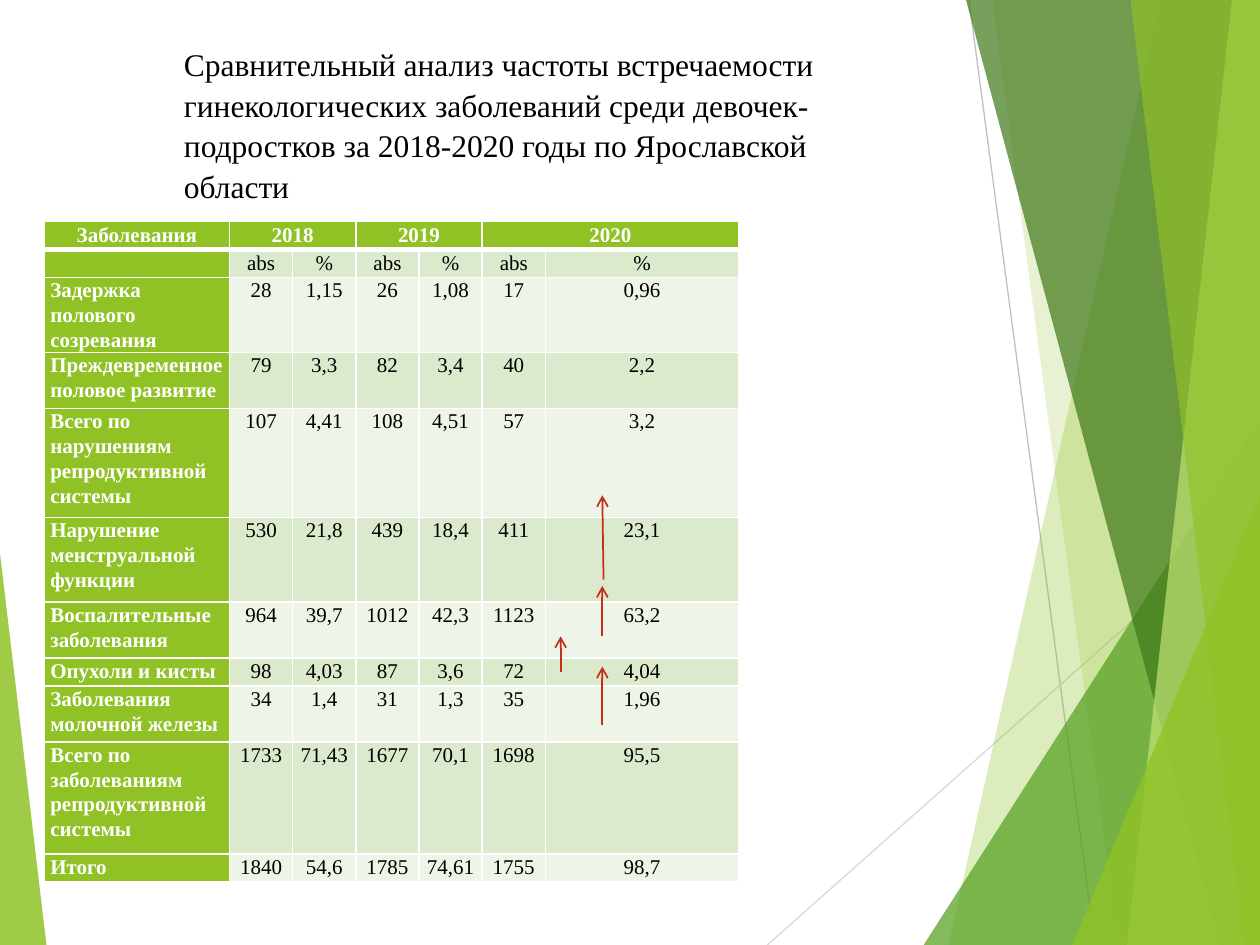
import lxml.etree
import pptx
import pptx.dml.color
import pptx.enum.shapes
import pptx.enum.text
import pptx.oxml.ns
import pptx.util

Pt = pptx.util.Pt
qn = pptx.oxml.ns.qn
ALIGN = pptx.enum.text.PP_ALIGN
WIDTH, HEIGHT = 720, 540
FONT = "Times New Roman"
COLORS = {
    "lime": "90C226", "green": "54A021", "dark": "3F7819", "pale": "C0E474",
    "band": "DBE9CD", "light": "EEF4E8", "white": "FFFFFF", "black": "000000",
    "red": "C42F1A", "gray": "BFBFBF", "silver": "D9D9D9",
}

TITLE = ("Сравнительный анализ частоты встречаемости гинекологических заболеваний "
         "среди девочек-подростков за 2018-2020 годы по Ярославской области")
ROWS = [
    (16, ["Заболевания", "2018", "", "2019", "", "2020", ""]),
    (16, ["", "abs", "%", "abs", "%", "abs", "%"]),
    (32, ["Задержка полового созревания", "28", "1,15", "26", "1,08", "17", "0,96"]),
    (32, ["Преждевременное половое развитие", "79", "3,3", "82", "3,4", "40", "2,2"]),
    (62.4, ["Всего по нарушениям репродуктивной системы",
            "107", "4,41", "108", "4,51", "57", "3,2"]),
    (48.2, ["Нарушение менструальной функции", "530", "21,8", "439", "18,4", "411", "23,1"]),
    (32, ["Воспалительные заболевания", "964", "39,7", "1012", "42,3", "1123", "63,2"]),
    (16, ["Опухоли и кисты", "98", "4,03", "87", "3,6", "72", "4,04"]),
    (32, ["Заболевания молочной железы", "34", "1,4", "31", "1,3", "35", "1,96"]),
    (64, ["Всего по заболеваниям репродуктивной системы",
          "1733", "71,43", "1677", "70,1", "1698", "95,5"]),
    (16, ["Итого", "1840", "54,6", "1785", "74,61", "1755", "98,7"]),
]
COLUMNS = [105.8] + [36.1] * 5 + [110.5]
BACKDROP_LINES = [((553.7, 0), (625.7, HEIGHT), "gray"),
                  ((WIDTH, 290), (438.5, HEIGHT), "silver")]
BACKDROP = [
    ("band", (663.1, 542.2), "lime", 30),
    ("band", (567.4, 638.6), "lime", 20),
    ("triangle", (527.8, 240, 192.2, 300), 1, "green", 72),
    ("band", (551.5, 697), "dark", 70),
    ("band", (704.2, 643.7), "pale", 70),
    ("band", (645.8, 711.4), "lime", 65),
    ("triangle", (612.7, 283, 107.3, 257), 1, "lime", 80),
    ("triangle", (0, 316, 26.6, 224), 0, "lime", 85),
]
ARROWS = [((344.2, 363.6), (344.2, 334.8)), ((344.2, 414), (344.2, 380.9)),
          ((344.9, 331.2), (344.2, 283)), ((320.4, 383.8), (320.4, 363.6))]


def rgb(name):
    """Return the colour with this name."""
    return pptx.dml.color.RGBColor.from_string(COLORS[name])


def write_text(frame, text, size=12, color="black", bold=False, align=ALIGN.LEFT, after=0):
    """Write one formatted paragraph and return it."""
    paragraph = frame.paragraphs[0]
    paragraph.alignment = align
    paragraph.line_spacing = 1.07
    paragraph.space_after = Pt(after)
    if text:
        run = paragraph.add_run()
        run.text = text
        run.font.name, run.font.size, run.font.bold = FONT, Pt(size), bold
        run.font.color.rgb = rgb(color)
    else:
        lxml.etree.SubElement(paragraph._p, qn("a:endParaRPr"), sz=str(size * 100))
    return paragraph


def add_line(slide, start, end, color, width, arrow=False):
    """Add a straight line, with an arrowhead at its end if asked."""
    connector = slide.shapes.add_connector(
        pptx.enum.shapes.MSO_CONNECTOR.STRAIGHT, *map(Pt, start + end))
    connector.line.color.rgb = rgb(color)
    connector.line.width = Pt(width)
    properties = connector._element.spPr
    if arrow:
        lxml.etree.SubElement(properties.find(qn("a:ln")), qn("a:tailEnd"), type="arrow")
    lxml.etree.SubElement(properties, qn("a:effectLst"))


def fill_shape(shape, color, opacity):
    """Give a shape a translucent fill without line or shadow."""
    shape.shadow.inherit = False
    shape.line.fill.background()
    shape.fill.solid()
    shape.fill.fore_color.rgb = rgb(color)
    tint = shape._element.spPr.find(qn("a:solidFill"))[0]
    lxml.etree.SubElement(tint, qn("a:alpha"), val=str(opacity * 1000))


def add_backdrop(slide):
    """Add the lines and the overlapping green facets."""
    for start, end, color in BACKDROP_LINES:
        add_line(slide, start, end, color, 0.75)
    for kind, place, *rest, color, opacity in BACKDROP:
        if kind == "band":
            top, bottom = place
            builder = slide.shapes.build_freeform(top, 0, scale=Pt(1))
            builder.add_line_segments([(WIDTH, 0), (WIDTH, HEIGHT), (bottom, HEIGHT)])
            shape = builder.convert_to_shape()
        else:
            shape = slide.shapes.add_shape(
                pptx.enum.shapes.MSO_SHAPE.ISOSCELES_TRIANGLE, *map(Pt, place))
            shape.adjustments[0] = rest[0]
        fill_shape(shape, color, opacity)


def add_title(slide):
    """Place and fill the title."""
    title = slide.shapes.title
    title.left, title.top, title.width, title.height = map(Pt, (61.9, 20.9, 455, 100.8))
    frame = title.text_frame
    frame.word_wrap = True
    frame.auto_size = pptx.enum.text.MSO_AUTO_SIZE.NONE
    frame.vertical_anchor = pptx.enum.text.MSO_ANCHOR.TOP
    paragraph = write_text(frame, TITLE, size=18, after=8)
    paragraph._p.get_or_add_pPr().set("marL", str(Pt(36)))


def format_cell(cell, text, row, column):
    """Write a cell with its borders and fill."""
    header, label = row == 0, column == 0
    cell.margin_left = cell.margin_right = Pt(3.4)
    cell.margin_top = cell.margin_bottom = 0
    write_text(cell.text_frame, text, bold=header or label,
               color="white" if header or label else "black",
               align=ALIGN.LEFT if label and not header else ALIGN.CENTER)
    properties = cell._tc.get_or_add_tcPr()
    for side in "LRTB":
        thick = (side == "B" and row == 0) or (side == "T" and row == 1)
        border = lxml.etree.SubElement(properties, qn("a:ln" + side), w=str(Pt(3 if thick else 1)))
        fill = lxml.etree.SubElement(border, qn("a:solidFill"))
        lxml.etree.SubElement(fill, qn("a:srgbClr"), val=COLORS["white"])
    cell.fill.solid()
    cell.fill.fore_color.rgb = rgb("lime" if header or label else "band" if row % 2 else "light")


def add_disease_table(slide):
    """Add the table of diseases by year."""
    heights = [height for height, _ in ROWS]
    table = slide.shapes.add_table(
        len(ROWS), len(COLUMNS), Pt(25.4), Pt(126.7), Pt(sum(COLUMNS)), Pt(sum(heights))).table
    for column, width in zip(table.columns, COLUMNS):
        column.width = Pt(width)
    for index, (height, texts) in enumerate(ROWS):
        table.rows[index].height = Pt(height)
        for column, text in enumerate(texts):
            format_cell(table.cell(index, column), text, index, column)
    for column in (1, 3, 5):
        table.cell(0, column).merge(table.cell(0, column + 1))


def main():
    """Build the slide and save it."""
    presentation = pptx.Presentation()
    presentation.slide_width, presentation.slide_height = Pt(WIDTH), Pt(HEIGHT)
    slide = presentation.slides.add_slide(presentation.slide_layouts[5])
    add_backdrop(slide)
    add_disease_table(slide)
    add_title(slide)
    for start, end in ARROWS:
        add_line(slide, start, end, "red", 1, arrow=True)
    presentation.save("out.pptx")


if __name__ == "__main__":
    main()
